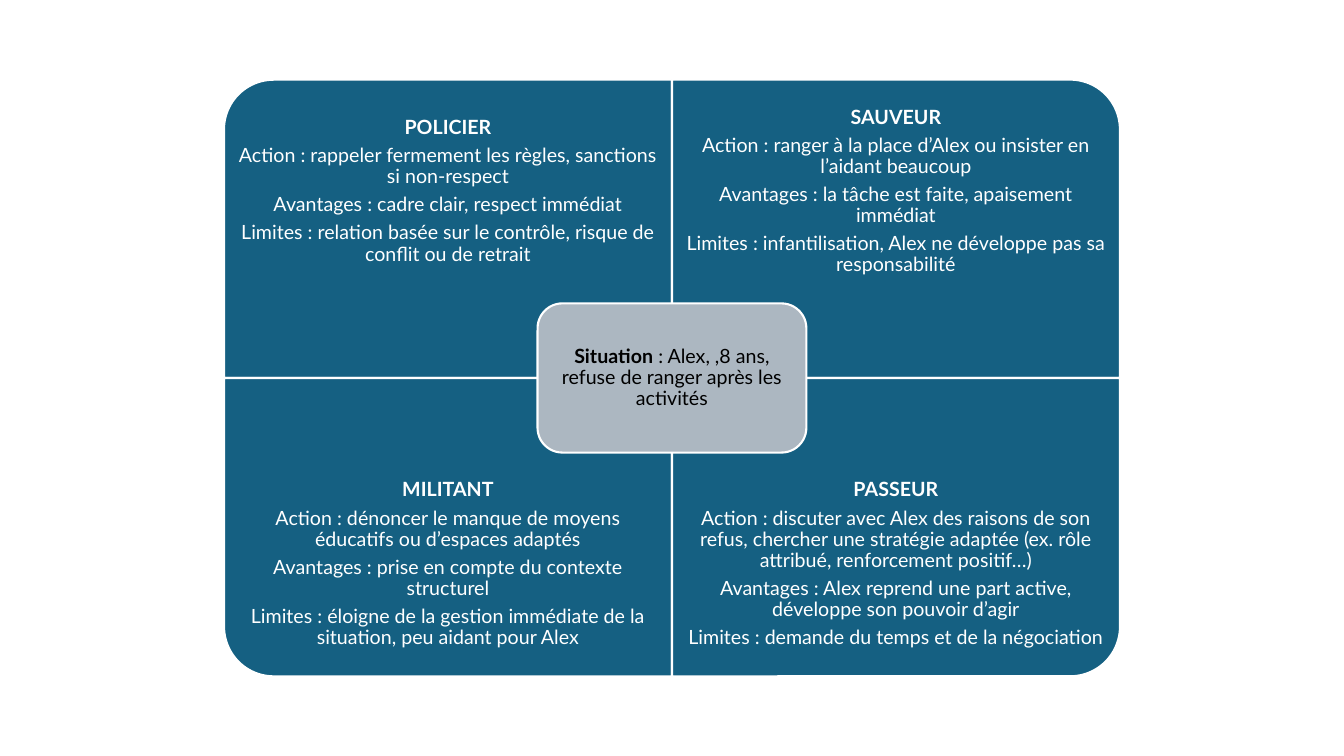
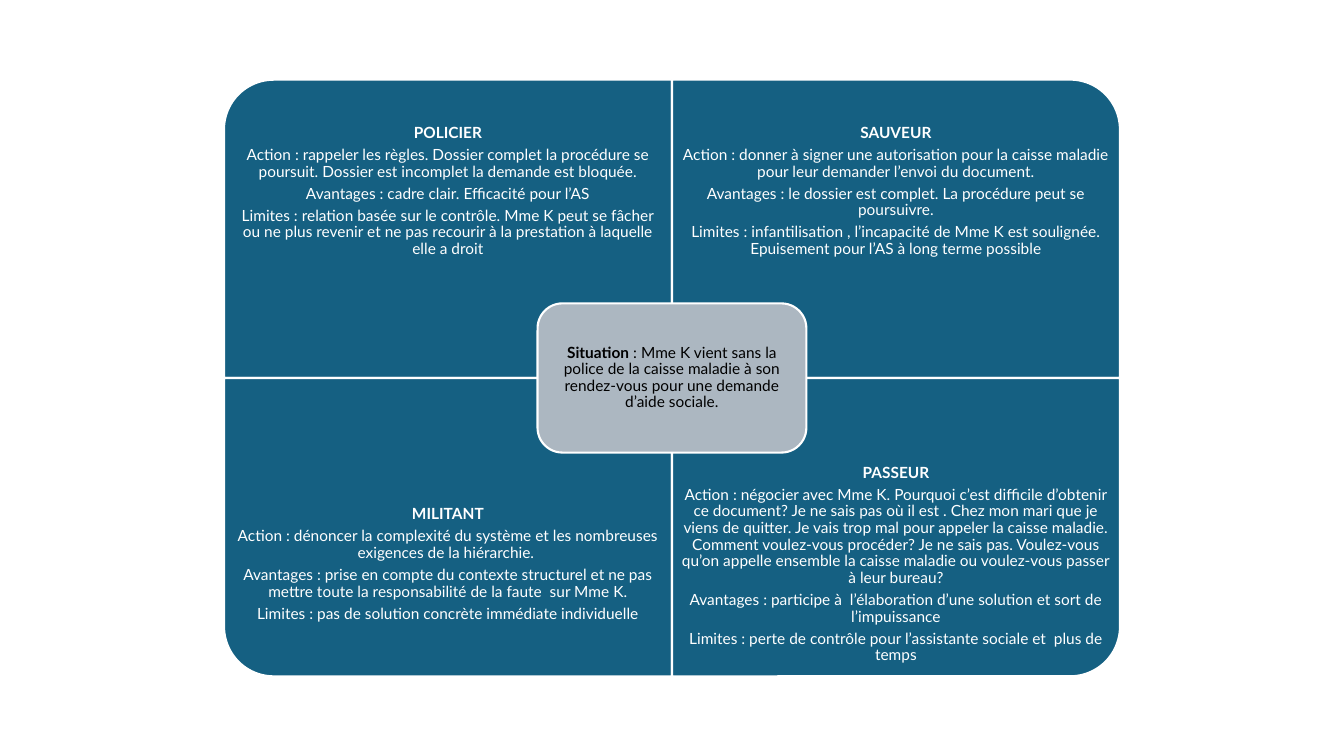
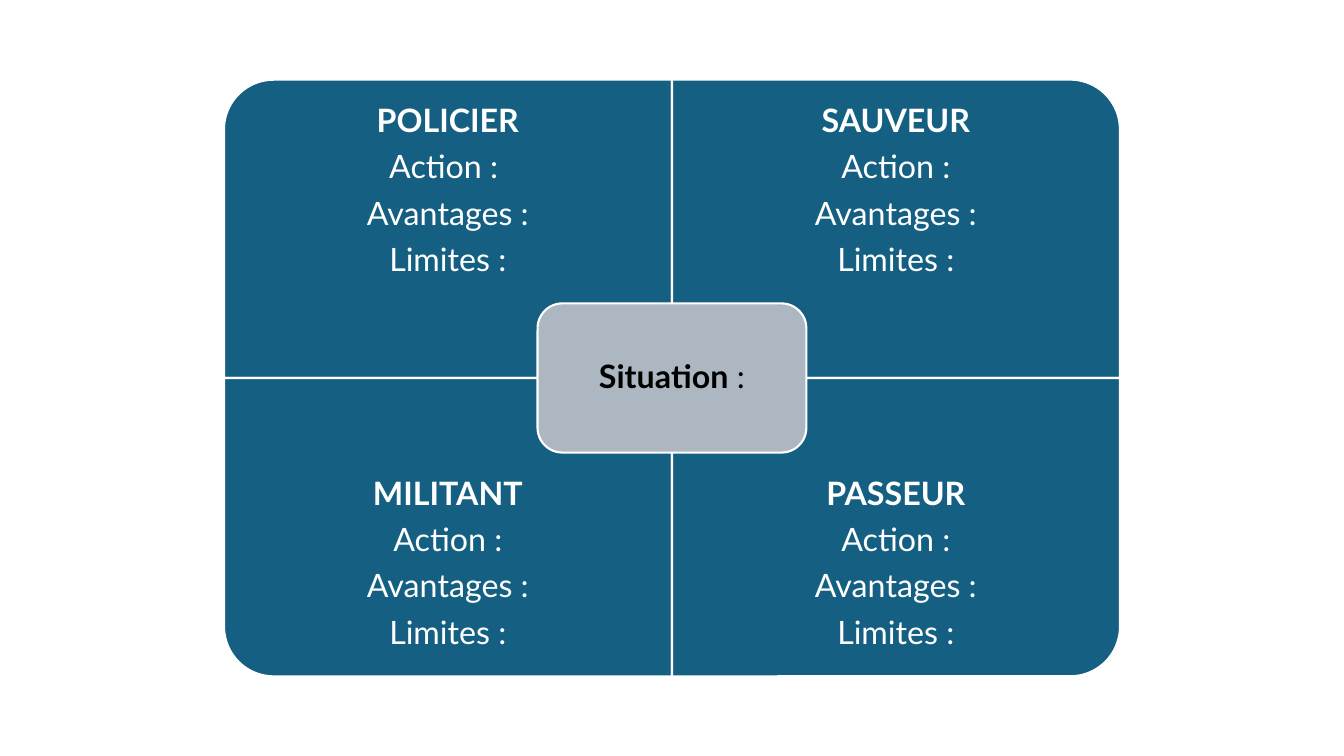
from dataclasses import dataclass

from pptx import Presentation
from pptx.dml.color import RGBColor
from pptx.enum.shapes import MSO_SHAPE
from pptx.enum.text import MSO_ANCHOR, PP_ALIGN
from pptx.util import Inches, Pt


@dataclass(frozen=True)
class Theme:
    font: str = "Lato"
    panel: str = "156082"
    centre: str = "ACB7C1"
    light: str = "FFFFFF"
    dark: str = "000000"
    border: float = 1.5
    large: int = 23
    medium: int = 14
    small: int = 11


THEME = Theme()
ROLES = ("POLICIER", "SAUVEUR", "MILITANT", "PASSEUR")
SITUATIONS = [
    {
        "size": THEME.medium,
        "situation": " : Alex, ,8 ans, refuse de ranger après les activités",
        "POLICIER": (
            "Action : rappeler fermement les règles, sanctions si non-respect",
            "Avantages : cadre clair, respect immédiat",
            "Limites : relation basée sur le contrôle, risque de conflit ou de retrait",
        ),
        "SAUVEUR": (
            "Action : ranger à la place d’Alex ou insister en l’aidant beaucoup",
            "Avantages : la tâche est faite, apaisement immédiat",
            "Limites : infantilisation, Alex ne développe pas sa responsabilité",
        ),
        "MILITANT": (
            "Action : dénoncer le manque de moyens éducatifs ou d’espaces adaptés",
            "Avantages : prise en compte du contexte structurel",
            "Limites : éloigne de la gestion immédiate de la situation, "
            "peu aidant pour Alex",
        ),
        "PASSEUR": (
            "Action : discuter avec Alex des raisons de son refus, chercher une "
            "stratégie adaptée (ex. rôle attribué, renforcement positif…)",
            "Avantages : Alex reprend une part active, développe son pouvoir d’agir",
            "Limites : demande du temps et de la négociation",
        ),
    },
    {
        "size": THEME.small,
        "situation": " : Mme K vient sans la police de la caisse maladie à son "
        "rendez-vous pour une demande d’aide sociale.",
        "POLICIER": (
            "Action : rappeler les règles. Dossier complet la procédure se poursuit. "
            "Dossier est incomplet la demande est bloquée.",
            "Avantages : cadre clair. Efficacité pour l’AS",
            "Limites : relation basée sur le contrôle. Mme K peut se fâcher ou ne plus "
            "revenir et ne pas recourir à la prestation à laquelle elle a droit",
        ),
        "SAUVEUR": (
            "Action : donner à signer une autorisation pour la caisse maladie pour "
            "leur demander l’envoi du document.",
            "Avantages : le dossier est complet. La procédure peut se poursuivre.",
            "Limites : infantilisation , l’incapacité de Mme K est soulignée. "
            "Epuisement pour l’AS à long terme possible",
        ),
        "MILITANT": (
            "Action : dénoncer la complexité du système et les nombreuses exigences "
            "de la hiérarchie. ",
            "Avantages : prise en compte du contexte structurel et ne pas mettre toute "
            "la responsabilité de la faute  sur Mme K.",
            "Limites : pas de solution concrète immédiate individuelle",
        ),
        "PASSEUR": (
            "Action : négocier avec Mme K. Pourquoi c’est difficile d’obtenir ce "
            "document? Je ne sais pas où il est . Chez mon mari que je viens de "
            "quitter. Je vais trop mal pour appeler la caisse maladie. Comment "
            "voulez-vous procéder? Je ne sais pas. Voulez-vous qu’on appelle ensemble "
            "la caisse maladie ou voulez-vous passer à leur bureau?",
            "Avantages : participe à  l’élaboration d’une solution et sort de "
            "l’impuissance",
            "Limites : perte de contrôle pour l’assistante sociale et  plus de temps",
        ),
    },
    {
        "size": THEME.large,
        "situation": " :",
        "POLICIER": ("Action : ", "Avantages :", "Limites :"),
        "SAUVEUR": ("Action :", "Avantages :", "Limites :"),
        "MILITANT": ("Action :", "Avantages :", "Limites :"),
        "PASSEUR": ("Action :", "Avantages :", "Limites :"),
    },
]

SLIDE_W, SLIDE_H = 13.33, 7.5
MID_X, MID_Y = SLIDE_W / 2, SLIDE_H / 2
PANEL_W, PANEL_H = SLIDE_W / 3, 2.96
TEXT_H = PANEL_H * 0.75
CENTRE_W, CENTRE_H = PANEL_W * 0.6, PANEL_H / 2
CENTRE_PAD = 0.07
ROTATIONS = (270, 0, 180, 90)


def add_text(shapes, paragraphs, x, y, w, h, *, size, color, inset):
    tf = shapes.add_textbox(Inches(x), Inches(y), Inches(w), Inches(h)).text_frame
    tf.word_wrap = True
    tf.vertical_anchor = MSO_ANCHOR.MIDDLE
    tf.margin_left = tf.margin_right = Inches(inset)
    tf.margin_top = tf.margin_bottom = Inches(inset)
    for i, runs in enumerate(paragraphs):
        p = tf.add_paragraph() if i else tf.paragraphs[0]
        p.alignment = PP_ALIGN.CENTER
        p.line_spacing = 0.9
        p.space_after = Pt(size * 0.35)
        for text, bold in runs:
            r = p.add_run()
            r.text = text
            r.font.name = THEME.font
            r.font.size = Pt(size)
            r.font.bold = bold
            r.font.color.rgb = RGBColor.from_string(color)


def add_block(shapes, kind, cx, cy, w, h, fill, rotation=0):
    if rotation % 180:
        w, h = h, w
    sp = shapes.add_shape(
        kind, Inches(cx - w / 2), Inches(cy - h / 2), Inches(w), Inches(h)
    )
    sp.rotation = rotation
    sp.shadow.inherit = False
    sp.fill.solid()
    sp.fill.fore_color.rgb = RGBColor.from_string(fill)
    sp.line.color.rgb = RGBColor.from_string(THEME.light)
    sp.line.width = Pt(THEME.border)


def add_matrix(s, content):
    shapes = s.shapes.add_group_shape().shapes
    size = content["size"]
    for i, (role, rotation) in enumerate(zip(ROLES, ROTATIONS)):
        row, col = divmod(i, 2)
        x = MID_X + (col - 1) * PANEL_W
        y = MID_Y + (row - 1) * PANEL_H
        add_block(shapes, MSO_SHAPE.ROUND_1_RECTANGLE, x + PANEL_W / 2,
                  y + PANEL_H / 2, PANEL_W, PANEL_H, THEME.panel, rotation)
        paragraphs = [[(role, True)]] + [[(line, False)] for line in content[role]]
        add_text(shapes, paragraphs, x, y + row * (PANEL_H - TEXT_H), PANEL_W, TEXT_H,
                 size=size, color=THEME.light, inset=size / 128)
    add_block(shapes, MSO_SHAPE.ROUNDED_RECTANGLE, MID_X, MID_Y,
              CENTRE_W, CENTRE_H, THEME.centre)
    w, h = CENTRE_W - 2 * CENTRE_PAD, CENTRE_H - 2 * CENTRE_PAD
    add_text(shapes, [[("Situation", True), (content["situation"], False)]],
             MID_X - w / 2, MID_Y - h / 2, w, h,
             size=size, color=THEME.dark, inset=size / 228)


def main():
    prs = Presentation()
    prs.slide_width, prs.slide_height = Inches(SLIDE_W), Inches(SLIDE_H)
    for content in SITUATIONS:
        add_matrix(prs.slides.add_slide(prs.slide_layouts[6]), content)
    prs.save("out.pptx")


if __name__ == "__main__":
    main()
